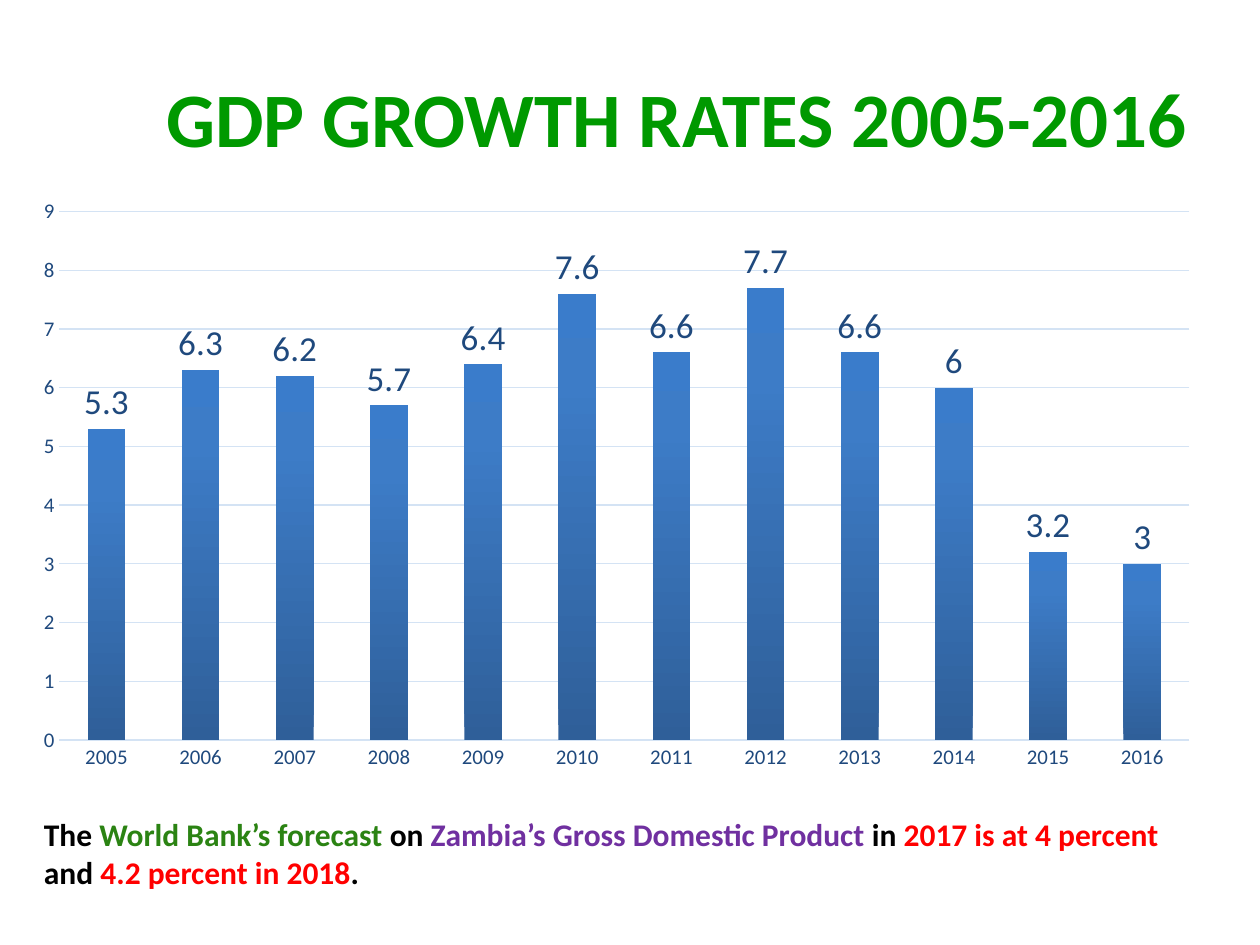
"""Build a slide with a column chart of yearly GDP growth and a forecast note."""
from dataclasses import dataclass

from lxml.etree import SubElement
from pptx import Presentation
from pptx.chart.data import CategoryChartData
from pptx.dml.color import RGBColor
from pptx.enum.chart import XL_CHART_TYPE as ChartType
from pptx.enum.chart import XL_LABEL_POSITION as LabelPosition
from pptx.enum.chart import XL_TICK_MARK as TickMark
from pptx.enum.text import MSO_ANCHOR as Anchor
from pptx.enum.text import MSO_AUTO_SIZE as AutoSize
from pptx.enum.text import PP_ALIGN as Align
from pptx.oxml import parse_xml
from pptx.oxml.ns import nsdecls, qn
from pptx.util import Inches, Pt


@dataclass(frozen=True)
class Theme:
    face: str = "Calibri"
    title: str = "009900"
    axis: str = "1F497D"
    grid: str = "D4E3F4"
    plain: str = "000000"
    source: str = "2B8313"
    subject: str = "7030A0"
    figure: str = "FF0000"
    bar: tuple = ((0, "2F5F99"), (80, "3D7CC7"), (100, "3A7CCB"))
    title_size: float = 44
    label_size: float = 20
    note_size: float = 18
    axis_size: float = 11.9
    line_width: float = 0.75


THEME = Theme()
WIDTH, HEIGHT = 10, 7.5

TITLE = "GDP GROWTH RATES 2005-2016"
FIRST_YEAR = 2005
GROWTH = (5.3, 6.3, 6.2, 5.7, 6.4, 7.6, 6.6, 7.7, 6.6, 6, 3.2, 3)
FORECAST = (
    ("The ", THEME.plain),
    ("World Bank’s forecast ", THEME.source),
    ("on ", THEME.plain),
    ("Zambia’s Gross Domestic Product ", THEME.subject),
    ("in ", THEME.plain),
    ("2017 is at 4 percent ", THEME.figure),
    ("and ", THEME.plain),
    ("4.2 percent in 2018", THEME.figure),
    (".", THEME.plain),
)

TITLE_AREA = (0.075, 0.04, 0.925, 0.167)
CHART_AREA = (0.017, 0.207, 0.942, 0.623)
NOTE_AREA = (0.025, 0.856, 0.925, 0.095)
PLOT_SHARES = {"x": 0.032, "y": 0.027, "w": 0.952, "h": 0.898}


def place(area):
    """Turn shares of the slide into lengths."""
    return [Inches(share * side) for share, side in zip(area, (WIDTH, HEIGHT) * 2)]


def style(font, size, color, bold=False):
    """Apply the theme face with a size and colour."""
    font.name, font.size, font.bold = THEME.face, Pt(size), bold
    font.color.rgb = RGBColor.from_string(color)


def add_span(para, text, size, color):
    """Append one bold run."""
    span = para.add_run()
    span.text = text
    style(span.font, size, color, bold=True)


def rule(line):
    """Draw a thin chart line."""
    line.color.rgb = RGBColor.from_string(THEME.grid)
    line.width = Pt(THEME.line_width)


def fix_plot(chart):
    """Hold the inner plot area at its shares of the chart."""
    area = chart._chartSpace.chart.plotArea
    for old in area.findall(qn("c:layout")):
        area.remove(old)
    layout = parse_xml(f"<c:layout {nsdecls('c')}/>")
    manual = SubElement(layout, qn("c:manualLayout"))
    modes = {"layoutTarget": "inner", "xMode": "edge", "yMode": "edge"}
    for name, value in {**modes, **PLOT_SHARES}.items():
        SubElement(manual, qn(f"c:{name}")).set("val", str(value))
    area.insert(0, layout)


def shade(series):
    """Fill the columns with the theme gradient, dark at the foot."""
    series.format.fill.gradient()
    series.format.fill.gradient_angle = 90
    stops = series._element.find(".//" + qn("a:gsLst"))
    for old in list(stops):
        stops.remove(old)
    for position, color in THEME.bar:
        stop = SubElement(stops, qn("a:gs"), pos=str(position * 1000))
        SubElement(stop, qn("a:srgbClr"), val=color)


def add_growth_chart(page):
    """Add the column chart of growth by year."""
    data = CategoryChartData()
    data.categories = [str(FIRST_YEAR + step) for step in range(len(GROWTH))]
    data.add_series("Series 1", GROWTH)
    chart = page.shapes.add_chart(
        ChartType.COLUMN_CLUSTERED, *place(CHART_AREA), data).chart
    chart.has_legend = chart.has_title = False
    fix_plot(chart)
    for axis in (chart.category_axis, chart.value_axis):
        axis.major_tick_mark = axis.minor_tick_mark = TickMark.NONE
        style(axis.tick_labels.font, THEME.axis_size, THEME.axis)
    rule(chart.category_axis.format.line)
    values = chart.value_axis
    values.minimum_scale, values.maximum_scale, values.major_unit = 0, 9, 1
    values.format.line.fill.background()
    rule(values.major_gridlines.format.line)
    plot = chart.plots[0]
    plot.gap_width, plot.vary_by_categories = 150, False
    shade(plot.series[0])
    labels = plot.series[0].data_labels
    labels.show_value, labels.position = True, LabelPosition.OUTSIDE_END
    style(labels.font, THEME.label_size, THEME.axis)


def add_title(page):
    """Place and format the title."""
    title = page.shapes.title
    title.left, title.top, title.width, title.height = place(TITLE_AREA)
    title.text_frame.vertical_anchor = Anchor.MIDDLE
    para = title.text_frame.paragraphs[0]
    para.alignment = Align.CENTER
    add_span(para, TITLE, THEME.title_size, THEME.title)


def add_note(page):
    """Add the forecast sentence under the chart."""
    frame = page.shapes.add_textbox(*place(NOTE_AREA)).text_frame
    frame.word_wrap = True
    frame.auto_size = AutoSize.SHAPE_TO_FIT_TEXT
    for text, color in FORECAST:
        add_span(frame.paragraphs[0], text, THEME.note_size, color)


def main():
    deck = Presentation()
    deck.slide_width, deck.slide_height = Inches(WIDTH), Inches(HEIGHT)
    page = deck.slides.add_slide(deck.slide_layouts.get_by_name("Title Only"))
    add_title(page)
    add_growth_chart(page)
    add_note(page)
    deck.save("out.pptx")


if __name__ == "__main__":
    main()
